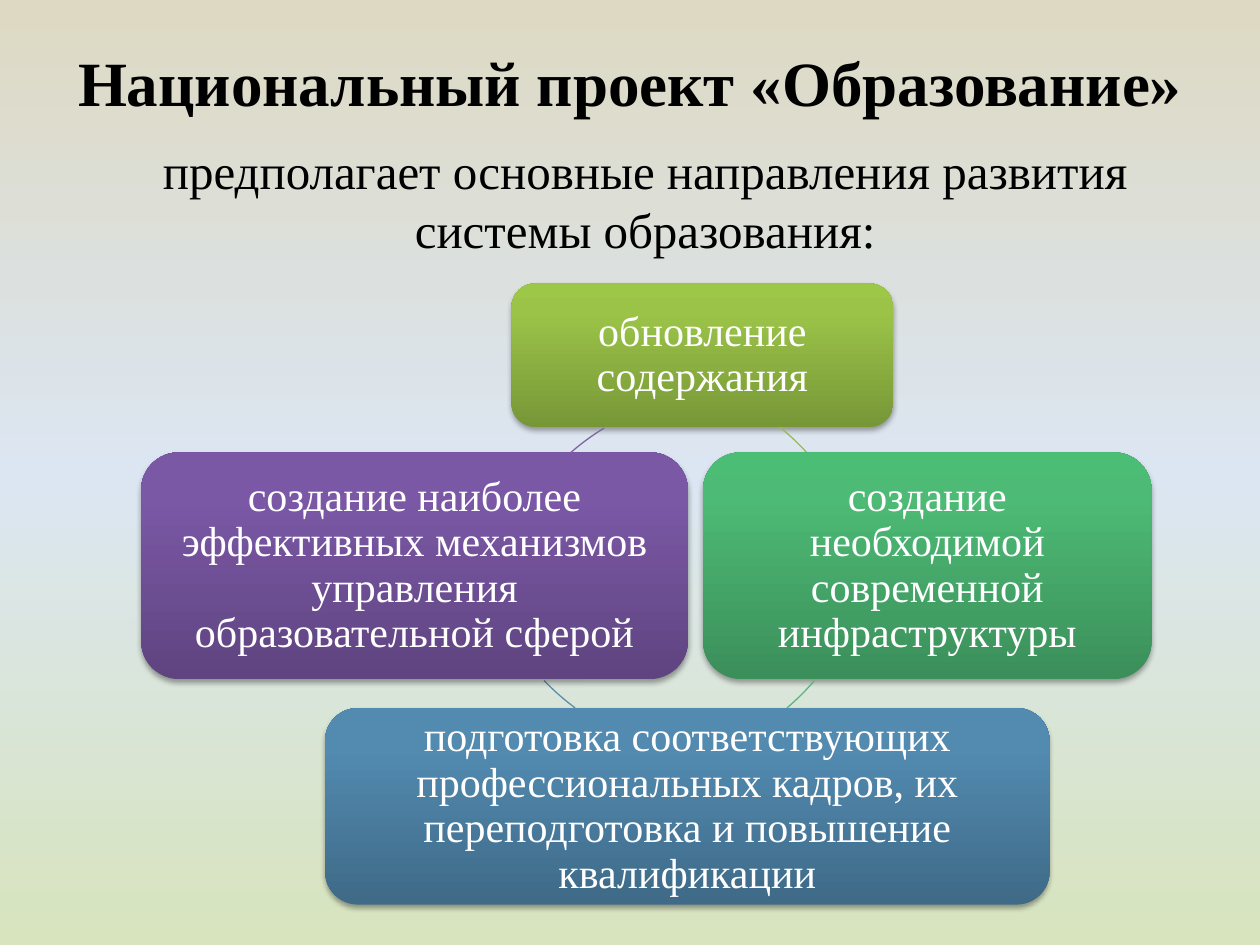
from math import atan2, degrees

from lxml.etree import SubElement
from pptx import Presentation
from pptx.dml.color import RGBColor
from pptx.enum.shapes import MSO_SHAPE as Shape
from pptx.enum.text import MSO_ANCHOR as Anchor, MSO_AUTO_SIZE as AutoSize, PP_ALIGN as Align
from pptx.oxml.ns import qn
from pptx.util import Inches, Pt

COLORS = {
    "text": "000000", "label": "FFFFFF", "shadow": "000000",
    "sand": "DDD9C3", "sky": "DCE6F2", "meadow": "D7E4BD",
    "olive": "9BBB59", "green": "5CB37C", "blue": "608CAB", "purple": "8064A2",
}
SHADES = {
    "olive": ("779737", "9BC348", "9DC746"),
    "green": ("3B8F5A", "4DBA75", "4BBD75"),
    "blue": ("3F6A88", "528AB0", "518BB3"),
    "purple": ("5F4480", "7B58A6", "7C57A8"),
}
COLUMNS, ROWS = 100, 75
DIAMETER = 38.1

CARDS = [
    ("olive", (40.6, 22.5, 30.3, 11.4), "обновление содержания"),
    ("green", (55.8, 35.9, 35.6, 18), "создание необходимой современной инфраструктуры"),
    ("blue", (25.8, 56.2, 57.5, 15.6),
     "подготовка соответствующих профессиональных кадров, их переподготовка и повышение квалификации"),
    ("purple", (11.2, 35.9, 43.4, 18),
     "создание наиболее эффективных механизмов управления образовательной сферой"),
]
ARCS = [
    ("olive", (30.9, 29.7), (61.9, 33.9), (64, 35.9)),
    ("green", (31.1, 22.6), (64.6, 54), (62.4, 56.1)),
    ("blue", (37.9, 21.8), (45.7, 56.1), (43.2, 54)),
    ("purple", (38.8, 31.2), (45.3, 35.9), (47.9, 33.9)),
]


class SlideBuilder:
    """Holds the deck, its current slide and the shared style."""

    font_name = "Times New Roman"

    def __init__(self):
        self.deck = Presentation()
        self.deck.slide_width, self.deck.slide_height = Inches(10), Inches(7.5)
        self.page = self.deck.slides.add_slide(self.deck.slide_layouts[5])

    def area(self, left, top, width, height):
        across = self.deck.slide_width / COLUMNS
        down = self.deck.slide_height / ROWS
        return int(left * across), int(top * down), int(width * across), int(height * down)

    def gradient(self, fill, owner, positions, colors, angle):
        fill.gradient()
        fill.gradient_angle = angle
        stops = next(owner.iter(qn("a:gsLst")))
        for stop in list(stops):
            stops.remove(stop)
        for position, color in zip(positions, colors):
            stop = SubElement(stops, qn("a:gs"), pos=str(position * 1000))
            SubElement(stop, qn("a:srgbClr"), val=color)

    def shadow(self, shape):
        shape.shadow.inherit = False
        effects = shape.element.spPr.find(qn("a:effectLst"))
        outer = SubElement(effects, qn("a:outerShdw"), blurRad=str(Pt(3.1)), dist=str(Pt(1.8)),
                           dir="5400000", rotWithShape="0")
        color = SubElement(outer, qn("a:srgbClr"), val=COLORS["shadow"])
        SubElement(color, qn("a:alpha"), val="35000")

    def fill_text(self, frame, lines, size, color, bold=False, spacing=None):
        frame.text = "\n".join(lines)
        for para in frame.paragraphs:
            para.alignment = Align.CENTER
            para.line_spacing = spacing
            para.font.name, para.font.size, para.font.bold = self.font_name, Pt(size), bold
            para.font.color.rgb = RGBColor.from_string(COLORS[color])

    def background(self, *names):
        self.gradient(self.page.background.fill, self.page.element, (1, 50, 100),
                      [COLORS[name] for name in names], 270)

    def title(self, place, text):
        box = self.page.shapes.title
        box.left, box.top, box.width, box.height = self.area(*place)
        box.text_frame.auto_size = AutoSize.NONE
        box.text_frame.vertical_anchor = Anchor.MIDDLE
        self.fill_text(box.text_frame, [text], 36, "text", bold=True)

    def subtitle(self, place, lines):
        box = self.page.shapes.add_textbox(*self.area(*place))
        self.fill_text(box.text_frame, lines, 28, "text")

    def card(self, name, place, text):
        box = self.page.shapes.add_shape(Shape.ROUNDED_RECTANGLE, *self.area(*place))
        self.gradient(box.fill, box.element, (0, 80, 100), SHADES[name], 90)
        box.line.fill.background()
        self.shadow(box)
        frame = box.text_frame
        frame.word_wrap = True
        frame.vertical_anchor = Anchor.MIDDLE
        frame.margin_left = frame.margin_right = Inches(0.1)
        frame.margin_top = frame.margin_bottom = Inches(0.1)
        self.fill_text(frame, [text], 24, "label", spacing=0.9)

    def arc(self, name, corner, start, end):
        arc = self.page.shapes.add_shape(Shape.ARC, *self.area(*corner, DIAMETER, DIAMETER))
        middle_x, middle_y = (side + DIAMETER / 2 for side in corner)
        for index, (x, y) in enumerate((start, end)):
            angle = degrees(atan2(y - middle_y, x - middle_x)) % 360
            arc.adjustments[index] = angle * 0.6
        arc.shadow.inherit = False
        arc.fill.background()
        arc.line.color.rgb = RGBColor.from_string(COLORS[name])
        arc.line.width = Pt(0.75)


def main():
    builder = SlideBuilder()
    builder.background("sand", "sky", "meadow")
    builder.title((5, 3, 90, 6.9), "Национальный проект «Образование»")
    builder.subtitle((11, 10.7, 80.4, 10.4),
                     ["предполагает основные направления развития", "системы образования:"])
    for card, arc in zip(CARDS, ARCS):
        builder.card(*card)
        builder.arc(*arc)
    builder.deck.save("out.pptx")


if __name__ == "__main__":
    main()
